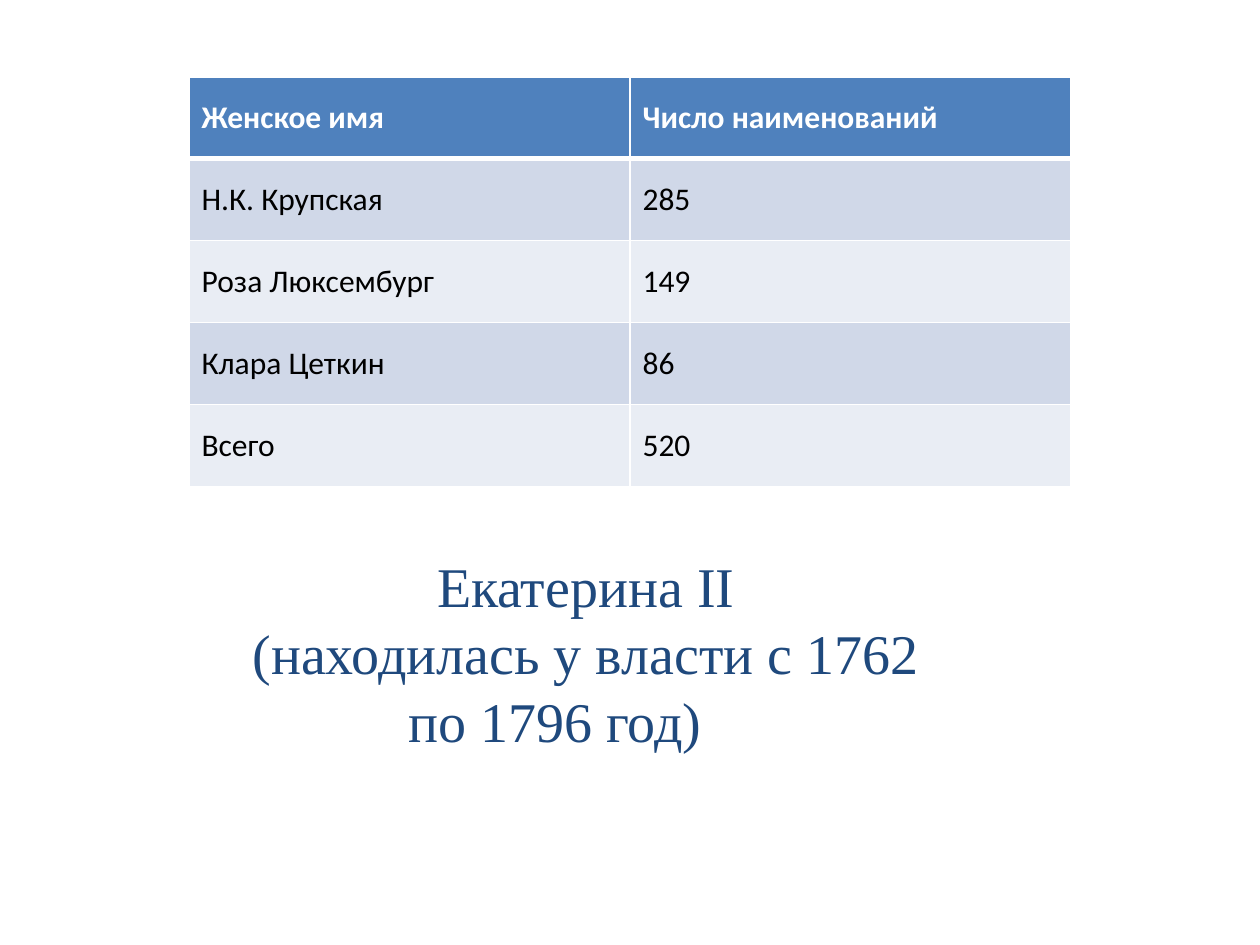
from lxml.etree import SubElement
from pptx import Presentation
from pptx.dml.color import RGBColor
from pptx.enum.text import MSO_ANCHOR, PP_ALIGN
from pptx.oxml import parse_xml
from pptx.oxml.ns import nsdecls
from pptx.util import Inches, Pt

ROWS = [
    ("Женское имя", "Число наименований"),
    ("Н.К. Крупская", "285"),
    ("Роза Люксембург", "149"),
    ("Клара Цеткин", "86"),
    ("Всего", "520"),
]
NOTE = ["Екатерина II", "(находилась у власти с 1762 по 1796 год)"]
HEX = {
    "head": "4F81BD",
    "odd": "D0D8E8",
    "even": "E9EDF4",
    "white": "FFFFFF",
    "black": "000000",
    "navy": "1F497D",
}


def color(name):
    return RGBColor.from_string(HEX[name])


def style(par, font, size, tone, bold=False):
    for run in par.runs:
        run.font.name = font
        run.font.size = Pt(size)
        run.font.bold = bold
        run.font.color.rgb = color(tone)


def border(cell, head):
    props = cell._tc.get_or_add_tcPr()
    for spot, side in enumerate("LRTB"):
        width = Pt(3 if head and side == "B" else 1)
        line = parse_xml(
            f'<a:ln{side} {nsdecls("a")} w="{width}"><a:solidFill>'
            f'<a:srgbClr val="{HEX["white"]}"/></a:solidFill></a:ln{side}>'
        )
        props.insert(spot, line)


def add_names(slide):
    frame = slide.shapes.add_table(
        len(ROWS), len(ROWS[0]), Inches(1.5), Inches(0.61), Inches(7), Inches(3.25)
    )
    table = frame.table
    for r, row in enumerate(ROWS):
        table.rows[r].height = Inches(0.65)
        head = r == 0
        band = "head" if head else "odd" if r % 2 else "even"
        for c, text in enumerate(row):
            cell = table.cell(r, c)
            cell.text_frame.text = text
            cell.vertical_anchor = MSO_ANCHOR.MIDDLE
            cell.fill.solid()
            cell.fill.fore_color.rgb = color(band)
            tone = "white" if head else "black"
            style(cell.text_frame.paragraphs[0], "Calibri", 18, tone, head)
            border(cell, head)


def add_note(slide):
    box = slide.shapes.add_textbox(
        Inches(1.31), Inches(4.33), Inches(6.19), Inches(1.75)
    )
    frame = box.text_frame
    frame.word_wrap = True
    frame.text = "\n".join(NOTE)
    for par in frame.paragraphs:
        par.alignment = PP_ALIGN.CENTER
        props = par._p.get_or_add_pPr()
        props.set("marL", "0")
        props.set("indent", str(Inches(0.49)))
        style(par, "Times New Roman", 32, "navy")


def main():
    deck = Presentation()
    deck.slide_width = Inches(10)
    deck.slide_height = Inches(7.5)
    slide = deck.slides.add_slide(deck.slide_layouts[6])
    add_names(slide)
    add_note(slide)
    deck.save("out.pptx")


if __name__ == "__main__":
    main()
